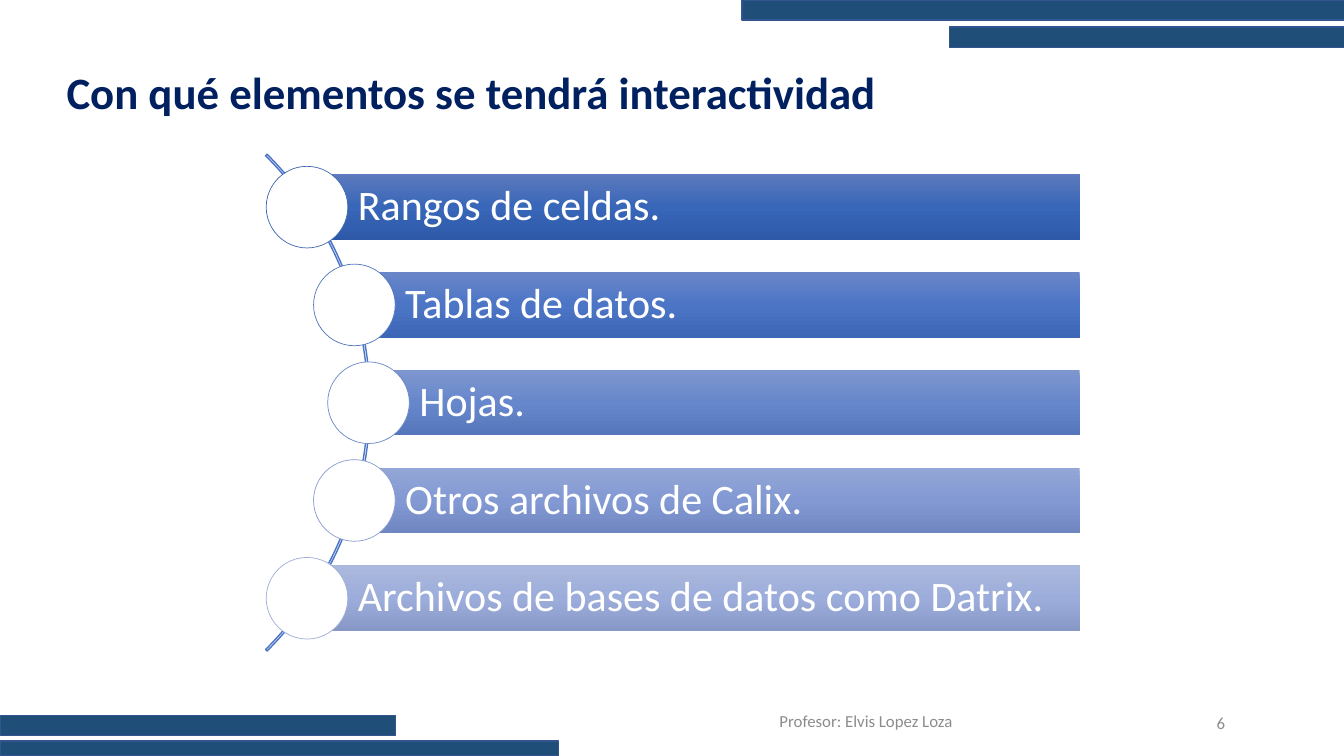
from copy import deepcopy
from dataclasses import dataclass

from pptx import Presentation
from pptx.dml.color import RGBColor as Rgb
from pptx.enum.shapes import MSO_SHAPE as Preset
from pptx.enum.text import MSO_ANCHOR as Anchor, MSO_AUTO_SIZE as AutoSize, PP_ALIGN as Align
from pptx.oxml.ns import qn
from pptx.util import Pt

PX = 9144  # EMU; 100 px to the inch


@dataclass(frozen=True)
class Theme:
    font: str = "Calibri"
    title: str = "002060"
    band: str = "1F4E79"
    band_line: str = "325491"
    arc: str = "4A75C5"
    white: str = "FFFFFF"
    grey: str = "8C8C8C"
    title_size: int = 32
    item_size: int = 30
    footer_size: int = 12


THEME = Theme()

# left, top, width, height
BANDS = [(736, 0, 598, 20), (942, 27, 392, 20), (0, 735, 554, 15), (0, 710, 392, 20)]

# text, bar left, gradient from top to bottom, circle outline
ITEMS = [
    ("Rangos de celdas.", 304, ("5C7ABD", "3866B8", "2D59A8"), "3E67B2"),
    ("Tablas de datos.", 351, ("6A86C8", "4C75C6", "3D66B6"), "5176C0"),
    ("Hojas.", 365, ("7E96CE", "6787CC", "5676BB"), "6C88C8"),
    ("Otros archivos de Calix.", 351, ("94A6D6", "8299D3", "6F86C0"), "869BD0"),
    ("Archivos de bases de datos como Datrix.", 304, ("ABB8DD", "9CADDB", "8798C6"), "9FAED8"),
]
BAR_TOP, BAR_STEP, BAR_HEIGHT, BAR_RIGHT = 173, 97, 65, 1071
CIRCLE = 81


def place(box, left, top, width, height):
    box.left, box.top, box.width, box.height = (n * PX for n in (left, top, width, height))


def write(box, text, *, size, color, bold=False, align=Align.LEFT,
          anchor=Anchor.MIDDLE, spacing=1.0, insets=(10, 5, 10, 5)):
    frame = box.text_frame
    frame.word_wrap = True
    frame.auto_size = AutoSize.NONE
    frame.vertical_anchor = anchor
    (frame.margin_left, frame.margin_top,
     frame.margin_right, frame.margin_bottom) = (n * PX for n in insets)
    para = frame.paragraphs[0]
    para.alignment = align
    para.line_spacing = spacing
    span = para.add_run()
    span.text = text
    span.font.name = THEME.font
    span.font.size = Pt(size)
    span.font.bold = bold
    span.font.color.rgb = Rgb.from_string(color)


def add_preset(page, preset, bounds, fill=None, line=None, weight=1):
    shape = page.shapes.add_shape(preset, *(n * PX for n in bounds))
    shape.shadow.inherit = False
    if fill:
        shape.fill.solid()
        shape.fill.fore_color.rgb = Rgb.from_string(fill)
    else:
        shape.fill.background()
    if line:
        shape.line.color.rgb = Rgb.from_string(line)
        shape.line.width = Pt(weight)
    else:
        shape.line.fill.background()
    return shape


def shade(shape, colors):
    """Vertical gradient with three evenly spaced stops."""
    shape.fill.gradient()
    shape.fill.gradient_angle = 270
    stop_list = shape._element.spPr.find(qn("a:gradFill")).find(qn("a:gsLst"))
    stop_list.append(deepcopy(stop_list[0]))
    for index, (stop, color) in enumerate(zip(shape.fill.gradient_stops, colors)):
        stop.position = index / 2
        stop.color.rgb = Rgb.from_string(color)


def add_item(page, index, text, left, colors, outline):
    top = BAR_TOP + index * BAR_STEP
    bar = add_preset(page, Preset.RECTANGLE, (left, top, BAR_RIGHT - left, BAR_HEIGHT))
    shade(bar, colors)
    write(bar, text, size=THEME.item_size, color=THEME.white,
          spacing=0.9, insets=(51, 8, 8, 8))
    circle_top = top - (CIRCLE - BAR_HEIGHT) // 2
    add_preset(page, Preset.OVAL, (left - CIRCLE // 2, circle_top, CIRCLE, CIRCLE),
               THEME.white, outline, 0.5)


def add_footer(page, text, bounds, align):
    box = page.shapes.add_textbox(*(n * PX for n in bounds))
    write(box, text, size=THEME.footer_size, color=THEME.grey, align=align)


def main():
    deck = Presentation()
    deck.slide_width, deck.slide_height = 1333 * PX, 750 * PX
    page = deck.slides.add_slide(deck.slide_layouts[5])

    # Corner bands
    for bounds in BANDS:
        add_preset(page, Preset.RECTANGLE, bounds, THEME.band, THEME.band_line)

    # Footer and page number
    add_footer(page, "Profesor: Elvis Lopez Loza", (741, 695, 236, 40), Align.CENTER)
    add_footer(page, "6", (989, 697, 236, 40), Align.RIGHT)

    # Title
    title = page.shapes.title
    place(title, 56, 59, 891, 64)
    write(title, "Con qué elementos se tendrá interactividad", size=THEME.title_size,
          color=THEME.title, bold=True, anchor=Anchor.TOP)

    # Thin arc behind the list
    arc = add_preset(page, Preset.BLOCK_ARC, (-330, 51, 697, 697), line=THEME.arc)
    for index, value in enumerate((189, 27, 0.003)):
        arc.adjustments[index] = value

    # Curved list
    for index, item in enumerate(ITEMS):
        add_item(page, index, *item)

    deck.save("out.pptx")


if __name__ == "__main__":
    main()
